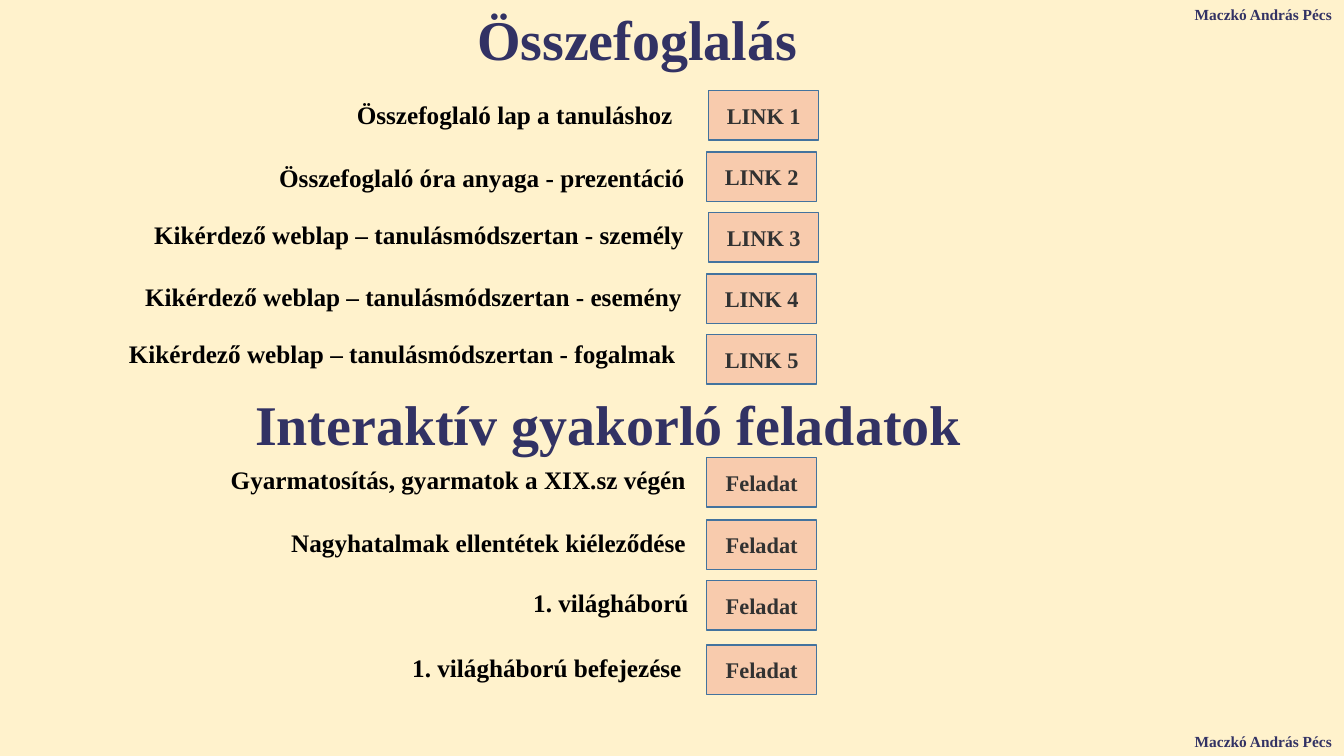
from pptx import Presentation
from pptx.dml.color import RGBColor
from pptx.enum.shapes import MSO_SHAPE
from pptx.enum.text import MSO_ANCHOR, MSO_AUTO_SIZE, PP_ALIGN
from pptx.util import Inches, Pt

FONT = "Times New Roman"
CREAM, PEACH, BLUE = "FFF2CC", "F8CBAD", "43739E"
NAVY, BLACK, GREY = "323264", "000000", "323232"
BUTTON_LEFT, BUTTON_WIDTH, BUTTON_HEIGHT = 7.01, 1.09, 0.49

# label, its left, top and width, then the button's top and left
LINKS = [
    ("Összefoglaló lap a tanuláshoz", 3.44, 0.94, 3.41, 0.9, 7.03),
    ("Összefoglaló óra anyaga - prezentáció", 2.67, 1.56, 4.41, 1.51, BUTTON_LEFT),
    ("Kikérdező weblap – tanulásmódszertan - személy", 1.43, 2.13, 5.61, 2.11, 7.03),
    ("Kikérdező weblap – tanulásmódszertan - esemény", 1.34, 2.74, 5.61, 2.72, BUTTON_LEFT),
    ("Kikérdező weblap – tanulásmódszertan - fogalmak", 1.18, 3.31, 5.78, 3.32, BUTTON_LEFT),
]
# label, its left and width, then the button's top
TASKS = [
    ("Gyarmatosítás, gyarmatok a XIX.sz végén", 2.19, 4.76, 4.54),
    ("Nagyhatalmak ellentétek kiéleződése", 2.79, 4.16, 5.16),
    ("1. világháború", 5.19, 1.76, 5.76),
    ("1. világháború befejezése", 3.99, 2.9, 6.4),
]


def rgb(color):
    return RGBColor.from_string(color)


class SlideBuilder:
    def __init__(self, s):
        self.s = s
        s.background.fill.solid()
        s.background.fill.fore_color.rgb = rgb(CREAM)

    def add_run(self, tf, text, size, color, align):
        p = tf.paragraphs[0]
        p.alignment = align
        r = p.add_run()
        r.text = text
        r.font.name, r.font.size, r.font.bold = FONT, Pt(size), True
        r.font.color.rgb = rgb(color)

    def text(self, text, left, top, width, height, size, color,
             align=PP_ALIGN.LEFT, wrap=True):
        sp = self.s.shapes.add_textbox(
            Inches(left), Inches(top), Inches(width), Inches(height))
        tf = sp.text_frame
        tf.word_wrap = wrap
        tf.auto_size = MSO_AUTO_SIZE.SHAPE_TO_FIT_TEXT
        self.add_run(tf, text, size, color, align)

    def heading(self, text, left, top):
        self.text(text, left, top, 8.96, 0.77, 40, NAVY, PP_ALIGN.CENTER)

    def label(self, text, left, top, width, wrap=True):
        self.text(text, left, top, width, 0.4, 18, BLACK, wrap=wrap)

    def author(self, top):
        self.text("Maczkó András Pécs", 11.75, top, 1.59, 0.29, 11, NAVY)

    def button(self, text, top, left=BUTTON_LEFT):
        sp = self.s.shapes.add_shape(
            MSO_SHAPE.RECTANGLE, Inches(left), Inches(top),
            Inches(BUTTON_WIDTH), Inches(BUTTON_HEIGHT))
        sp.shadow.inherit = False
        sp.fill.solid()
        sp.fill.fore_color.rgb = rgb(PEACH)
        sp.line.color.rgb = rgb(BLUE)
        sp.line.width = Pt(1)
        sp.text_frame.vertical_anchor = MSO_ANCHOR.MIDDLE
        self.add_run(sp.text_frame, text, 16, GREY, PP_ALIGN.CENTER)


def main():
    prs = Presentation()
    prs.slide_width, prs.slide_height = Inches(13.33), Inches(7.5)
    b = SlideBuilder(prs.slides.add_slide(prs.slide_layouts[6]))

    b.heading("Összefoglalás", 1.84, 0)
    for number, (text, left, top, width, button_top, button_left) in enumerate(LINKS, 1):
        b.label(text, left, top, width)
        b.button(f"LINK {number}", button_top, button_left)

    b.heading("Interaktív gyakorló feladatok", 1.55, 3.82)
    for text, left, width, button_top in TASKS:
        b.label(text, left, button_top + 0.02, width, wrap=False)
        b.button("Feladat", button_top)

    for top in (0, 7.21):
        b.author(top)
    prs.save("out.pptx")


if __name__ == "__main__":
    main()
